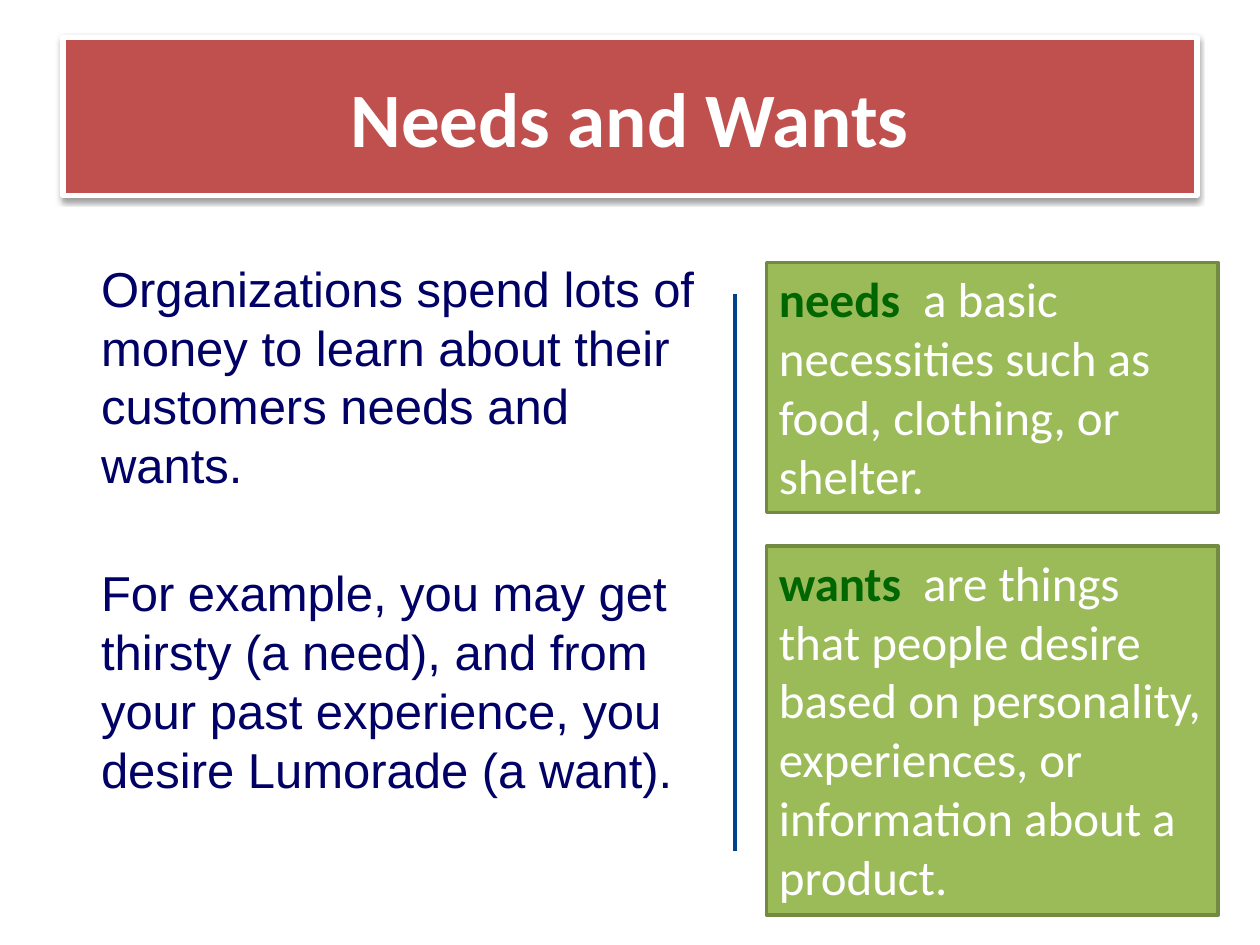
from lxml import etree
from pptx import Presentation
from pptx.dml.color import RGBColor
from pptx.enum import shapes, text
from pptx.oxml import parse_xml
from pptx.oxml.ns import nsdecls, qn
from pptx.util import Pt

WHITE, RED, GREEN, OLIVE = "FFFFFF", "C0504D", "9BBB59", "738A42"
NAVY, DARK_GREEN, BLUE = "000066", "006600", "01428D"


def color(value):
    return RGBColor.from_string(value)


def set_values(target, values):
    for name, value in values.items():
        setattr(target, name, value)


def paint(shape, fill, line, width):
    shape.fill.solid()
    shape.fill.fore_color.rgb = color(fill)
    shape.line.color.rgb = color(line)
    shape.line.width = Pt(width)


def add_span(para, words, ink, size=28, name="Calibri", bold=False):
    span = para.add_run()
    span.text = words
    set_values(span.font, {"size": Pt(size), "name": name, "bold": bold})
    span.font.color.rgb = color(ink)


def add_title(page, box, words):
    title = page.shapes.title
    set_values(title, dict(zip(("left", "top", "width", "height"), map(Pt, box))))
    paint(title, RED, WHITE, 3)
    title.text_frame.vertical_anchor = text.MSO_ANCHOR.MIDDLE
    para = title.text_frame.paragraphs[0]
    para.alignment = text.PP_ALIGN.CENTER
    add_span(para, words, WHITE, size=44, bold=True)
    # Soft shadow below the banner
    title._element.spPr.append(parse_xml(
        f'<a:effectLst {nsdecls("a")}>'
        f'<a:outerShdw blurRad="{Pt(3.1)}" dist="{Pt(1.6)}" dir="5400000" rotWithShape="0">'
        '<a:srgbClr val="000000"><a:alpha val="38000"/></a:srgbClr>'
        '</a:outerShdw></a:effectLst>'))


def add_passage(page, box, words):
    frame = page.shapes.add_textbox(*map(Pt, box)).text_frame
    frame.word_wrap = True
    para = frame.paragraphs[0]
    para._p.get_or_add_pPr().set("marL", str(Pt(8.64)))
    add_span(para, words, NAVY, name="Arial")


def add_divider(page, x, top, bottom):
    line = page.shapes.add_connector(
        shapes.MSO_CONNECTOR.STRAIGHT, Pt(x), Pt(top), Pt(x), Pt(bottom))
    line.line.color.rgb = color(BLUE)
    line.line.width = Pt(2.25)
    etree.SubElement(line._element.spPr, qn("a:effectLst"))


def add_definition(page, box, term, meaning):
    card = page.shapes.add_shape(shapes.MSO_SHAPE.RECTANGLE, *map(Pt, box))
    card.shadow.inherit = False
    paint(card, GREEN, OLIVE, 2)
    set_values(card.text_frame, {
        "word_wrap": True,
        "auto_size": text.MSO_AUTO_SIZE.SHAPE_TO_FIT_TEXT,
        "vertical_anchor": text.MSO_ANCHOR.TOP})
    para = card.text_frame.paragraphs[0]
    para.alignment = text.PP_ALIGN.LEFT
    # A tab stop sets the gap between term and meaning
    stops = etree.SubElement(para._p.get_or_add_pPr(), qn("a:tabLst"))
    etree.SubElement(stops, qn("a:tab"), pos=str(Pt(82.5)), algn="l")
    add_span(para, term + "\t", DARK_GREEN, bold=True)
    add_span(para, meaning, WHITE)


def main():
    deck = Presentation()
    deck.slide_width, deck.slide_height = Pt(720), Pt(540)
    page = deck.slides.add_slide(deck.slide_layouts[5])

    # Title banner
    add_title(page, (36, 21.6, 648, 90), "Needs and Wants")

    # Explanation on the left
    passages = (
        (144, "Organizations spend lots of money to learn about their "
              "customers needs and wants."),
        (318, "For example, you may get thirsty (a need), and from your past "
              "experience, you desire Lumorade (a want)."))
    for top, words in passages:
        add_passage(page, (42, top, 378, 162), words)

    add_divider(page, 420, 168, 486)

    # Definitions on the right
    definitions = (
        (150, 143, "needs", "a basic necessities such as food, clothing, or shelter."),
        (312, 211, "wants", "are things that people desire based on personality, "
                            "experiences, or information about a product."))
    for top, height, term, meaning in definitions:
        add_definition(page, (438, top, 258, height), term, meaning)

    deck.save("out.pptx")


if __name__ == "__main__":
    main()
